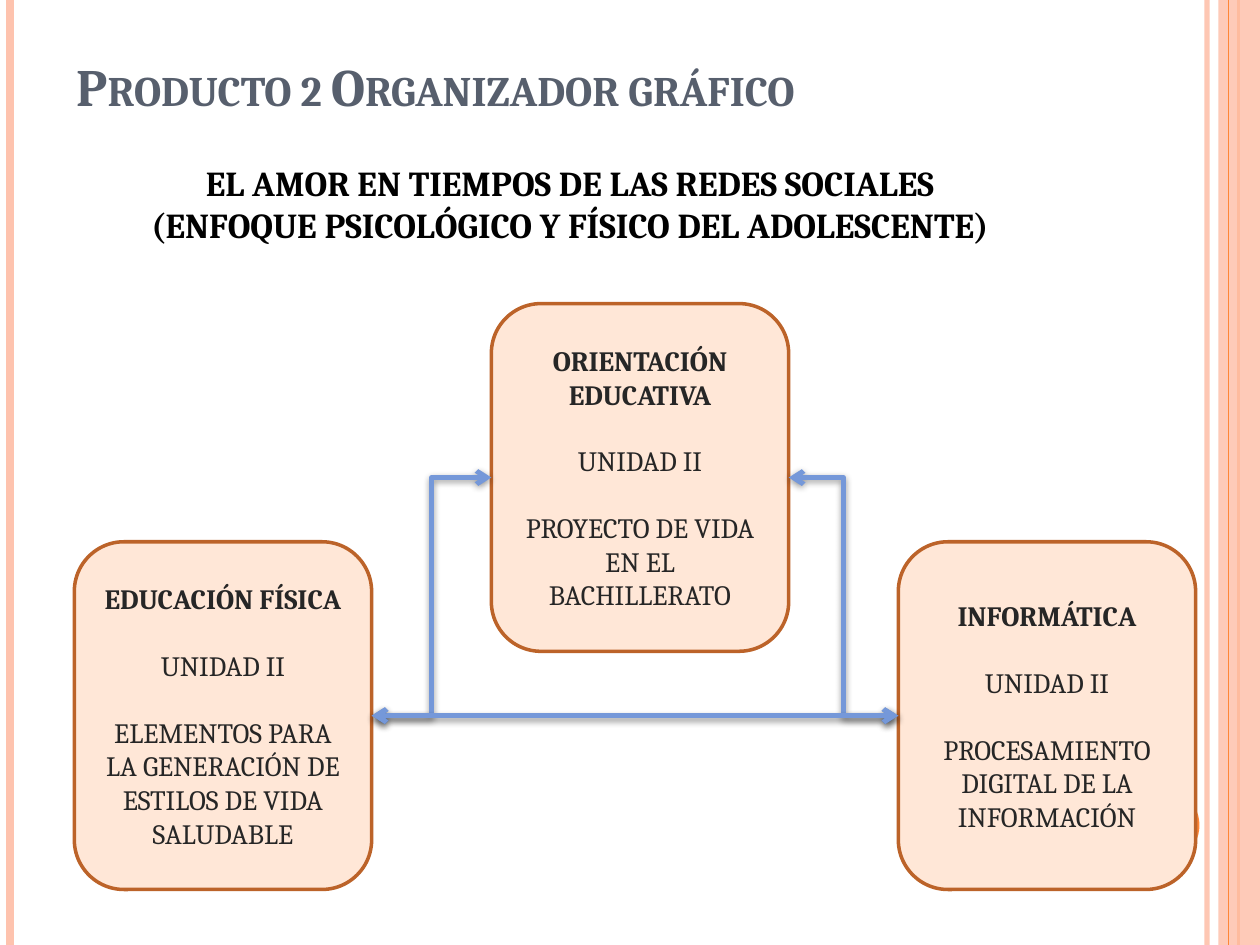
from dataclasses import dataclass

from lxml import etree
from pptx import Presentation
from pptx.dml.color import RGBColor
from pptx.enum import shapes as es, text as et
from pptx.oxml import ns
from pptx.util import Inches, Pt


@dataclass(frozen=True)
class Theme:
    """Hold the colours, font and type sizes."""
    font: str = "Cambria"
    head: str = "575F6D"
    black: str = "000000"
    ink: str = "262626"
    card: str = "FFE7D7"
    edge: str = "BC6329"
    link: str = "7598D9"
    pale: str = "FEC3AE"
    accent: str = "FE8637"
    big: int = 30
    mid: int = 20
    small: int = 16
    gap: int = 19


T = Theme()
LEFT, RIGHT = 1, 3


def rgb(code):
    """Turn a hex code into a colour."""
    return RGBColor.from_string(code)


def node(parent, tag, **attrs):
    """Append a drawing element with attributes."""
    return etree.SubElement(parent, ns.qn(tag), attrs)


def fade(host, alpha):
    """Set the opacity of a solid colour, in percent."""
    color = next(host.iter(ns.qn("a:srgbClr")))
    node(color, "a:alpha", val=str(alpha * 1000))


def write(frame, lines, size, color, bold=1, align="LEFT", anchor="TOP", gap=0, caps=False):
    """Write paragraphs, the first `bold` of them in bold."""
    frame.word_wrap = True
    frame.vertical_anchor = getattr(et.MSO_ANCHOR, anchor)
    for i, line in enumerate(lines):
        para = frame.add_paragraph() if i else frame.paragraphs[0]
        para.alignment = getattr(et.PP_ALIGN, align)
        para.space_before = Pt(gap if i else 0)
        run = para.add_run()
        run.text = line
        font = run.font
        font.name, font.size, font.bold = T.font, Pt(size), i < bold
        font.color.rgb = rgb(color)
        if caps:
            run._r.get_or_add_rPr().set("cap", "small")


def label(slide, box, line, size, color, **form):
    """Place a text box holding one paragraph."""
    area = slide.shapes.add_textbox(*map(Inches, box))
    write(area.text_frame, [line], size, color, **form)


def block(slide, kind, box, fill, edge=None):
    """Place a filled shape, outlined if an edge is given."""
    shape = slide.shapes.add_shape(kind, *map(Inches, box))
    shape.shadow.inherit = False
    shape.fill.solid()
    shape.fill.fore_color.rgb = rgb(fill)
    if edge:
        shape.line.color.rgb = rgb(edge)
        shape.line.width = Pt(2)
    else:
        shape.line.fill.background()
    return shape


def rule(slide, x, box, color, width):
    """Draw an upright line through the height of the box."""
    left, top, _, high = box
    line = slide.shapes.add_connector(
        es.MSO_CONNECTOR.STRAIGHT,
        Inches(left + x), Inches(top), Inches(left + x), Inches(top + high))
    line.line.color.rgb = rgb(color)
    line.line.width = Pt(width)
    node(line._element.spPr, "a:effectLst")
    return line


def frame(slide, box):
    """Draw the side rules, the band and the dot."""
    left, top, wide, high = box
    fade(rule(slide, 9.58, box, T.pale, 3)._element, 93)
    rule(slide, 0.08, box, T.pale, 4.5)
    rule(slide, 9.83, box, T.accent, 1.5)
    band = block(slide, es.MSO_SHAPE.RECTANGLE,
                 (left + wide - 0.33, top, 0.33, high), T.pale)
    fade(band._element, 87)
    rule(slide, 9.75, box, T.accent, 0.75)
    block(slide, es.MSO_SHAPE.OVAL, (left + 8.92, top + 6.25, 0.6, 0.6), T.accent)


def card(slide, box, name, topic):
    """Place one subject card with its unit and topic."""
    shape = block(slide, es.MSO_SHAPE.ROUNDED_RECTANGLE, box, T.card, T.edge)
    write(shape.text_frame, [name, "UNIDAD II", topic], T.small, T.ink,
          align="CENTER", anchor="MIDDLE", gap=T.gap)
    return shape


def link(slide, start, end):
    """Join the right side of one card to the left of another."""
    line = slide.shapes.add_connector(es.MSO_CONNECTOR.ELBOW, 0, 0, 0, 0)
    line.begin_connect(start, RIGHT)
    line.end_connect(end, LEFT)
    line.line.color.rgb = rgb(T.link)
    line.line.width = Pt(2.75)
    props = line._element.spPr
    stroke = props.find(ns.qn("a:ln"))
    for tag in ("a:headEnd", "a:tailEnd"):
        node(stroke, tag, type="arrow")
    shade = node(node(props, "a:effectLst"), "a:outerShdw",
                 blurRad=str(Pt(4)), dist=str(Pt(1.6)), dir="5400000", rotWithShape="0")
    node(shade, "a:srgbClr", val=T.black)
    fade(shade, 42)


def chart(slide, box):
    """Lay out the three cards and the links among them."""
    left, top, wide, high = box
    w, h = 2.36, 2.76
    low = top + high - h
    sport = card(slide, (left, low, w, h), "EDUCACIÓN FÍSICA",
                 "ELEMENTOS PARA LA GENERACIÓN DE ESTILOS DE VIDA SALUDABLE")
    guide = card(slide, (left + 3.31, top, w, h), "ORIENTACIÓN EDUCATIVA",
                 "PROYECTO DE VIDA EN EL BACHILLERATO")
    tech = card(slide, (left + wide - w, low, w, h), "INFORMÁTICA",
                "PROCESAMIENTO DIGITAL DE LA INFORMACIÓN")
    for start, end in ((sport, guide), (guide, tech), (sport, tech)):
        link(slide, start, end)


def main():
    """Build and save the slide."""
    deck = Presentation()
    deck.slide_width, deck.slide_height = Inches(10), Inches(7.5)
    slide = deck.slides.add_slide(deck.slide_layouts[6])
    frame(slide, (0, 0, 10, 7.5))
    label(slide, (0.51, 0.36, 9, 0.62), "Producto 2 Organizador gráfico",
          T.big, T.head, anchor="BOTTOM", caps=True)
    chart(slide, (0.59, 2.41, 8.9, 4.65))
    label(slide, (0.98, 1.23, 7.09, 1.11),
          "EL AMOR EN TIEMPOS DE LAS REDES SOCIALES "
          "(ENFOQUE PSICOLÓGICO Y FÍSICO DEL ADOLESCENTE)",
          T.mid, T.black, align="CENTER")
    deck.save("out.pptx")


if __name__ == "__main__":
    main()
